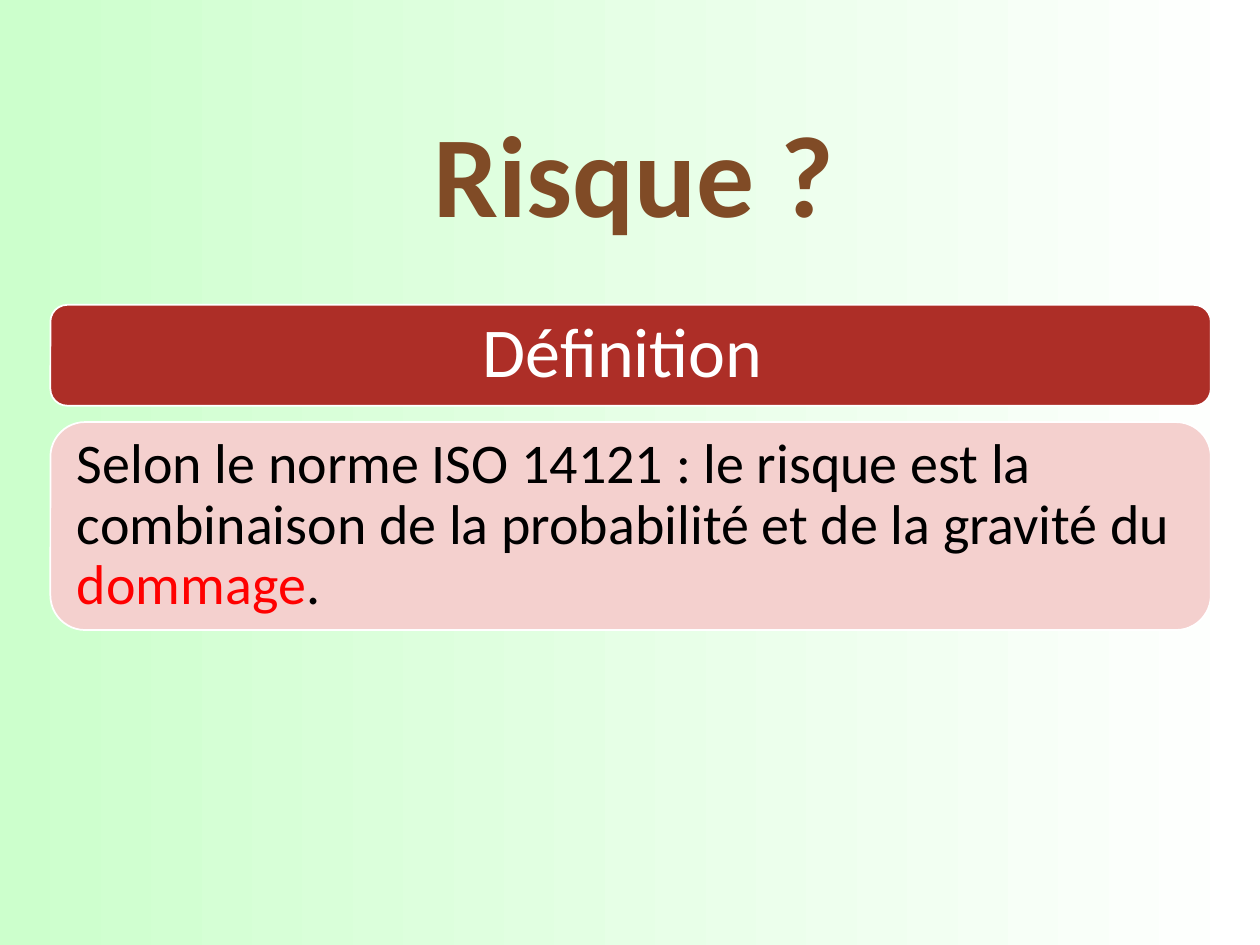
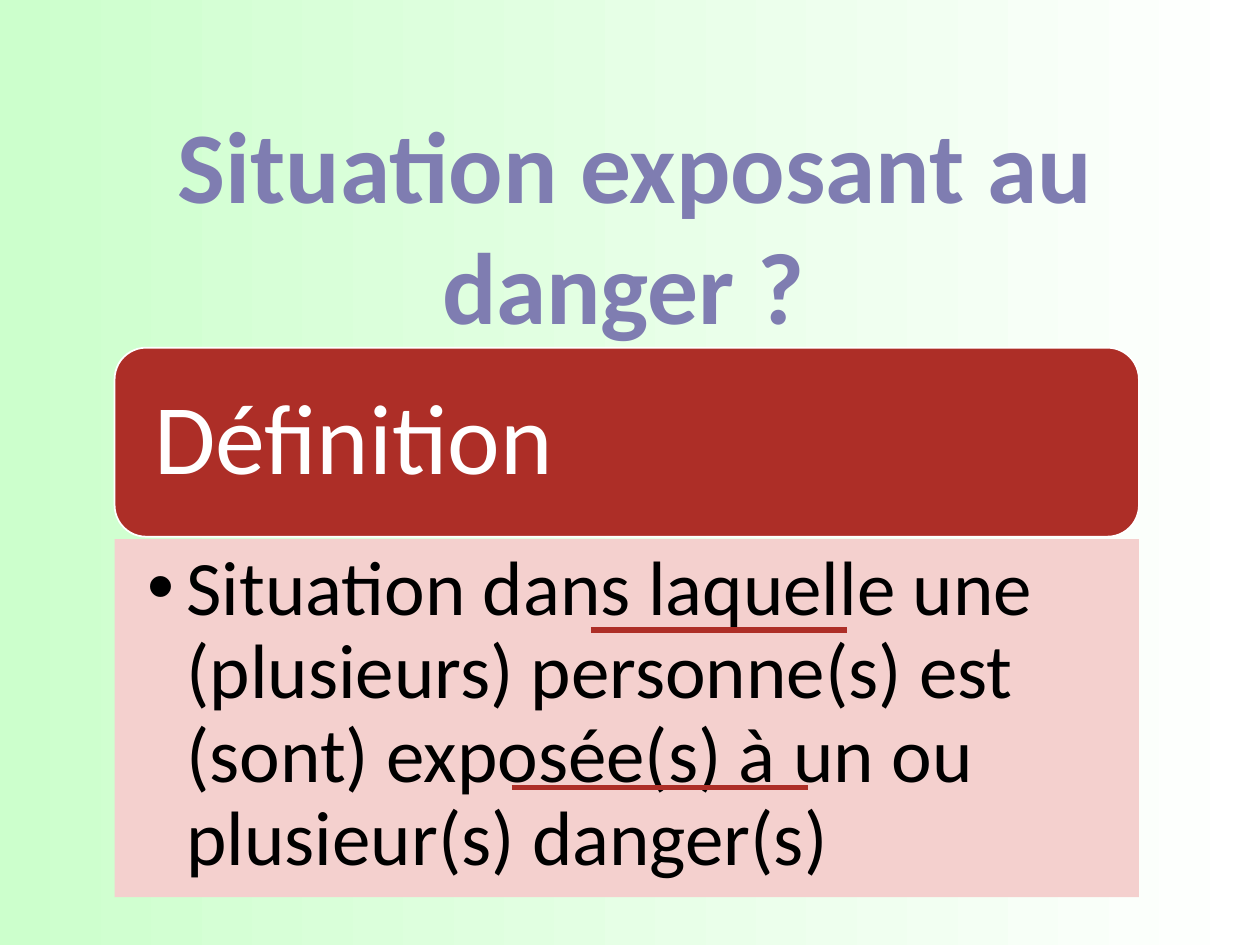
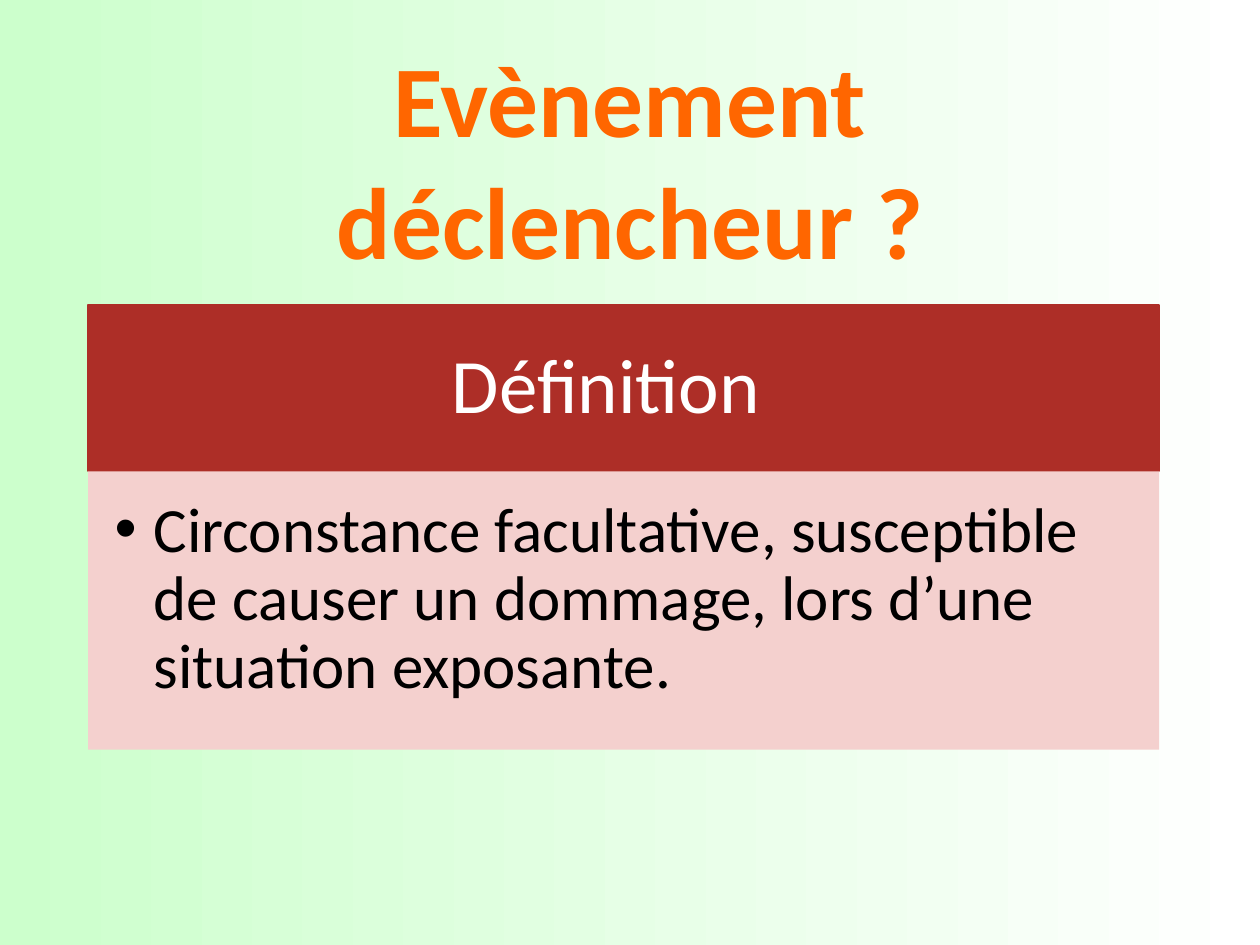
from lxml import etree
from pptx import Presentation
from pptx.dml.color import RGBColor
from pptx.enum.shapes import MSO_CONNECTOR, MSO_SHAPE
from pptx.enum.text import MSO_ANCHOR, PP_ALIGN
from pptx.oxml.ns import qn
from pptx.util import Inches, Pt

# Grid of square cells
COLS, ROWS = 100, 75
CELL = Inches(10) / COLS

FONT = "Calibri"
MINT = RGBColor(0xCC, 0xFF, 0xCC)
WHITE = RGBColor(0xFF, 0xFF, 0xFF)
BLACK = RGBColor(0x00, 0x00, 0x00)
RED = RGBColor(0xFF, 0x00, 0x00)
BRICK = RGBColor(0xAD, 0x2E, 0x27)
ROSE = RGBColor(0xF4, 0xD0, 0xCE)
BROWN = RGBColor(0x80, 0x4B, 0x26)
VIOLET = RGBColor(0x7F, 0x7D, 0xB1)
ORANGE = RGBColor(0xFF, 0x66, 0x00)

TITLE = dict(anchor=MSO_ANCHOR.BOTTOM, align=PP_ALIGN.CENTER, bold=True,
             insets=(1, 0.5, 1, 0.5))
BODY = dict(anchor=MSO_ANCHOR.TOP, bullet=True)


def cells(*values):
    return [round(v * CELL) for v in values]


def add_bullet(p, indent=3.1):
    pPr = p._p.get_or_add_pPr()
    step = cells(indent)[0]
    pPr.set("marL", str(step))
    pPr.set("indent", str(-step))
    etree.SubElement(pPr, qn("a:buFont")).set("typeface", "Arial")
    etree.SubElement(pPr, qn("a:buChar")).set("char", "•")


def write(sp, runs, size, insets, anchor=MSO_ANCHOR.MIDDLE,
          align=PP_ALIGN.LEFT, bold=False, spacing=None, bullet=False):
    """Fill a shape with one paragraph of (text, colour) runs."""
    tf = sp.text_frame
    left, top, right, bottom = cells(*insets)
    frame = dict(word_wrap=True, vertical_anchor=anchor, margin_left=left,
                 margin_top=top, margin_right=right, margin_bottom=bottom)
    for name, value in frame.items():
        setattr(tf, name, value)
    p = tf.paragraphs[0]
    p.alignment = align
    if spacing:
        p.line_spacing = spacing
    if bullet:
        add_bullet(p)
    for text, color in runs:
        r = p.add_run()
        r.text = text
        for name, value in dict(name=FONT, size=Pt(size), bold=bold).items():
            setattr(r.font, name, value)
        r.font.color.rgb = color


def add_title(slide, at, text, size, color):
    sp = slide.shapes.add_textbox(*cells(*at))
    write(sp, [(text, color)], size, **TITLE)


def add_panel(slide, at, fill, runs, size, insets,
              kind=MSO_SHAPE.RECTANGLE, border=None, **style):
    sp = slide.shapes.add_shape(kind, *cells(*at))
    sp.shadow.inherit = False
    sp.fill.solid()
    sp.fill.fore_color.rgb = fill
    if border is None:
        sp.line.fill.background()
    else:
        sp.line.color.rgb = border
        sp.line.width = Pt(1)
    write(sp, runs, size, insets, spacing=0.9, **style)


def add_underline(slide, x1, x2, y):
    line = slide.shapes.add_connector(MSO_CONNECTOR.STRAIGHT,
                                      *cells(x1, y, x2, y))
    line.line.color.rgb = BRICK
    line.line.width = Pt(3)
    etree.SubElement(line._element.spPr, qn("a:effectLst"))


def set_background(master):
    fill = master.background.fill
    fill.gradient()
    fill.gradient_angle = 0
    for stop, color, position in zip(fill.gradient_stops, (MINT, WHITE), (0, 1)):
        stop.color.rgb = color
        stop.position = position


def risk_slide(slide):
    rounded = dict(kind=MSO_SHAPE.ROUNDED_RECTANGLE, border=WHITE)
    add_title(slide, (7.8, 1.6, 85, 18), "Risque ?", 66, BROWN)
    add_panel(slide, (4, 24.2, 92.1, 8), BRICK, [("Définition ", WHITE)], 40,
              (1.7, 0.8, 1.7, 0.8), align=PP_ALIGN.CENTER, **rounded)
    add_panel(slide, (4, 33.5, 92.1, 16.5), ROSE, [
        ("Selon le norme ISO 14121 : le risque est la combinaison "
         "de la probabilité et de la gravité du ", BLACK),
        ("dommage", RED), (".", BLACK)], 32, (1.3, 0.7, 1.3, 0.7), **rounded)


def exposure_slide(slide):
    add_title(slide, (5.1, 7.6, 90.6, 20.3), "Situation exposant au danger ? ",
              58, VIOLET)
    add_panel(slide, (9.1, 27.6, 81.3, 15), BRICK, [("Définition", WHITE)], 57,
              (2.4,) * 4, kind=MSO_SHAPE.ROUNDED_RECTANGLE, border=WHITE)
    add_panel(slide, (9.1, 42.8, 81.3, 28.4), ROSE, [
        ("Situation dans laquelle une (plusieurs) personne(s) est (sont) "
         "exposée(s) à un ou plusieur(s) danger(s)", BLACK)],
        44, (2.6, 0.8, 4.4, 0.8), **BODY)
    add_underline(slide, 40.6, 64.1, 62.5)
    add_underline(slide, 46.9, 67.2, 50)


def trigger_slide(slide):
    add_title(slide, (7.5, 4.4, 85, 18.3), "Evènement déclencheur ?", 58, ORANGE)
    # The wider right inset sets the heading slightly left of centre
    add_panel(slide, (7, 24.2, 85, 13.2), BRICK, [("Définition", WHITE)], 44,
              (3.4, 2, 6.2, 2), border=BRICK, align=PP_ALIGN.CENTER)
    add_panel(slide, (7, 37.4, 85, 22.1), ROSE, [
        ("Circonstance facultative, susceptible de causer un dommage, "
         "lors d’une situation exposante.", BLACK)],
        36, (2.1, 2.1, 2.8, 3.2), **BODY)


def main():
    prs = Presentation()
    prs.slide_width, prs.slide_height = cells(COLS, ROWS)
    set_background(prs.slide_master)
    for build in (risk_slide, exposure_slide, trigger_slide):
        build(prs.slides.add_slide(prs.slide_layouts[6]))
    prs.save("out.pptx")


if __name__ == "__main__":
    main()
